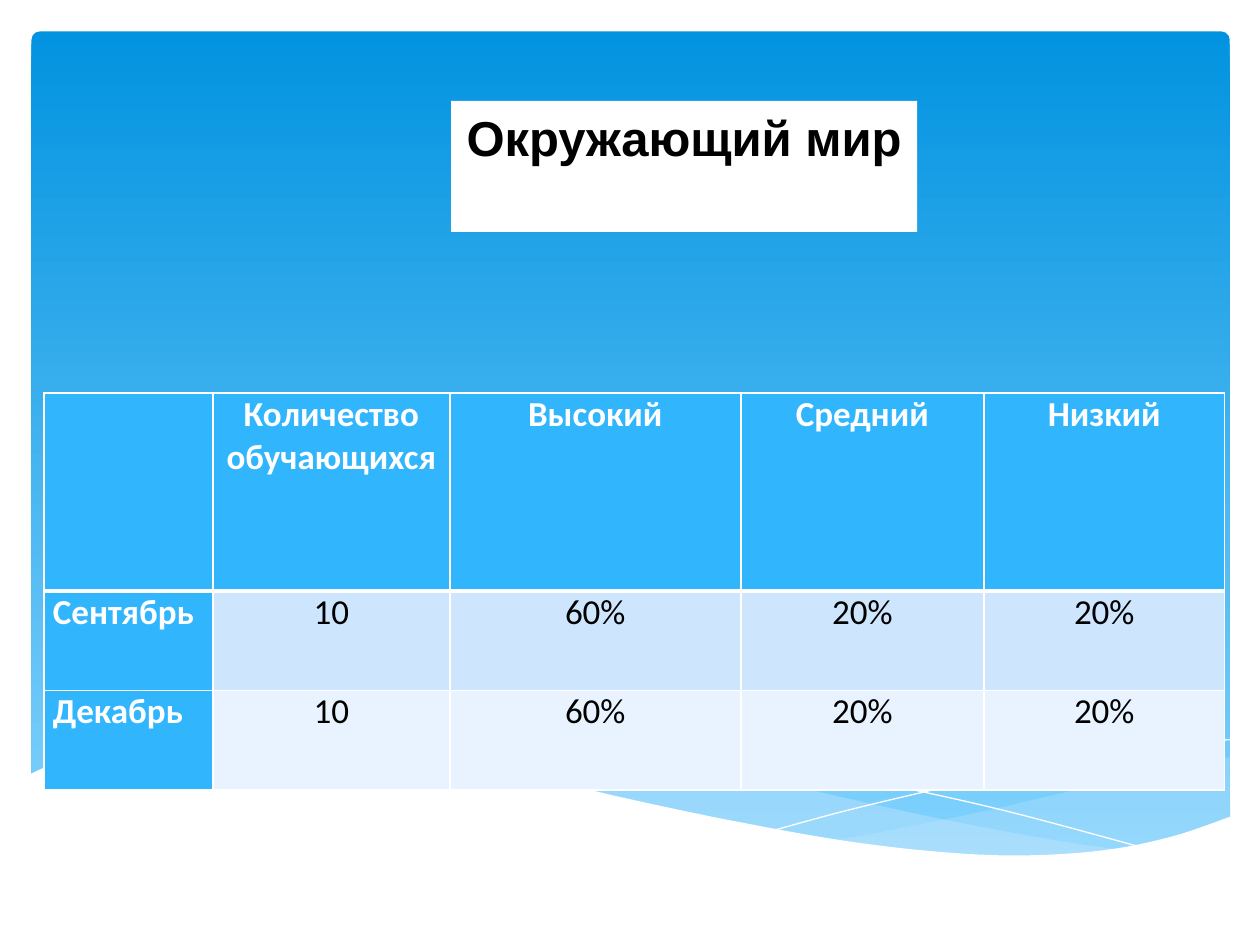
from dataclasses import dataclass
from typing import Any, Optional

from lxml.etree import SubElement
from pptx import Presentation
from pptx.dml.color import RGBColor
from pptx.enum.shapes import MSO_SHAPE as Preset
from pptx.enum.text import MSO_ANCHOR as Anchor, MSO_AUTO_SIZE as AutoSize, PP_ALIGN as Align
from pptx.oxml.ns import qn
from pptx.util import Emu, Pt

WHITE = RGBColor(0xFF, 0xFF, 0xFF)
BLACK = RGBColor(0x00, 0x00, 0x00)
DEEP_BLUE = RGBColor(0x02, 0x93, 0xE0)
SKY_BLUE = RGBColor(0x83, 0xD3, 0xFE)
HEADER_BLUE = RGBColor(0x31, 0xB6, 0xFD)
PALE_BLUE = RGBColor(0xC6, 0xE7, 0xFC)
BAND_COLORS = (RGBColor(0xCE, 0xE5, 0xFE), RGBColor(0xE8, 0xF3, 0xFF))

PX_PER_INCH = 100
CURVE_STEPS = 6
TITLE_ONLY_LAYOUT = 5

Point = tuple[float, float]
Curve = list[Point]

COLUMN_WIDTHS = (134, 188, 231, 193, 191)
ROW_HEIGHTS = (157, 79, 79)
TABLE_ROWS = (
    ("", "Количество обучающихся", "Высокий", "Средний", "Низкий"),
    ("Сентябрь", "10", "60%", "20%", "20%"),
    ("Декабрь", "10", "60%", "20%", "20%"),
)


@dataclass(frozen=True)
class Wave:
    """A chain of smooth curves, filled when closed and outlined when open."""
    curves: list[Curve]
    fill: Optional[RGBColor] = None
    opacity: int = 100


WAVES = (
    Wave([[(976, 601), (922, 611), (862, 625), (780, 644), (707, 659), (662, 667)],
          [(662, 667), (706, 674), (758, 678), (815, 680), (873, 676), (922, 667), (977, 649)]],
         PALE_BLUE, 29),
    Wave([[(894, 675), (838, 667), (742, 649), (630, 624), (555, 607), (489, 596),
           (420, 589), (362, 587), (314, 590), (287, 593)],
          [(287, 593), (343, 601), (405, 613), (491, 634), (567, 650), (651, 666),
           (723, 676), (786, 680), (839, 680), (894, 675)]],
         PALE_BLUE, 40),
    Wave([[(310, 597), (353, 591), (402, 589), (469, 590), (533, 596), (609, 606),
           (696, 621), (796, 643), (908, 673)]]),
    Wave([[(614, 659), (673, 643), (749, 625), (837, 606), (897, 596), (939, 590), (976, 587)]]),
    Wave([[(977, 648), (930, 664), (875, 675), (809, 679), (744, 676), (668, 667),
           (579, 651), (503, 635), (447, 622), (391, 609), (340, 599), (292, 592),
           (230, 587), (177, 586), (132, 588), (95, 593), (59, 601), (36, 609), (23, 615)],
          [(23, 731), (977, 731)]],
         WHITE),
)


def px(length: float) -> Emu:
    """Turn a length in px into EMU."""
    return Emu(round(length * 914400 / PX_PER_INCH))


def apply(target: Any, values: dict[str, Any]) -> None:
    """Set each named attribute of the target."""
    for name, value in values.items():
        setattr(target, name, value)


def smooth(points: Curve) -> Curve:
    """Return a Catmull-Rom curve through the points."""
    if len(points) < 3:
        return points
    padded = [points[0], *points, points[-1]]
    curve = [points[0]]
    for a, b, c, d in zip(padded, padded[1:], padded[2:], padded[3:]):
        for step in range(1, CURVE_STEPS + 1):
            t = step / CURVE_STEPS
            curve.append(tuple(
                q + t * (r - p) / 2 + t**2 * (2 * p - 5 * q + 4 * r - s) / 2
                + t**3 * (3 * q - p - 3 * r + s) / 2
                for p, q, r, s in zip(a, b, c, d)))
    return curve


def draw_backdrop(slide: Any) -> None:
    """Draw the rounded panel with its vertical gradient."""
    panel = slide.shapes.add_shape(Preset.ROUNDED_RECTANGLE, px(25), px(25), px(951), px(660))
    panel.adjustments[0] = 0.01
    panel.shadow.inherit = False
    panel.line.fill.background()
    panel.fill.gradient()
    panel.fill.gradient_angle = 270
    for stop, position, color in zip(panel.fill.gradient_stops, (0, 1), (DEEP_BLUE, SKY_BLUE)):
        stop.position = position
        stop.color.rgb = color


def draw_wave(slide: Any, wave: Wave) -> None:
    """Draw one wave as a filled band or a hairline."""
    points = [(px(x), px(y)) for curve in wave.curves for x, y in smooth(curve)]
    builder = slide.shapes.build_freeform(*points[0], scale=1.0)
    builder.add_line_segments(points[1:], close=wave.fill is not None)
    shape = builder.convert_to_shape()
    shape.shadow.inherit = False
    if wave.fill is None:
        shape.fill.background()
        shape.line.color.rgb = WHITE
        shape.line.width = Pt(0)
        return
    shape.line.fill.background()
    shape.fill.solid()
    shape.fill.fore_color.rgb = wave.fill
    if wave.opacity < 100:
        color = shape.element.spPr.find(qn("a:solidFill")).find(qn("a:srgbClr"))
        SubElement(color, qn("a:alpha"), val=str(wave.opacity * 1000))


def add_border(cell: Any, side: str, points: float) -> None:
    """Give one side of a cell a white border."""
    properties = cell._tc.get_or_add_tcPr()
    line = SubElement(properties, qn(f"a:ln{side}"), w=str(Pt(points)))
    fill = SubElement(line, qn("a:solidFill"))
    SubElement(fill, qn("a:srgbClr"), val=str(WHITE))


def format_cell(cell: Any, text: str, row: int, column: int) -> None:
    """Fill one cell with its text, borders and colours."""
    is_heading = row == 0 or column == 0
    margin = px(0 if column == 1 else 7)
    apply(cell, {"margin_left": margin, "margin_right": margin,
                 "margin_top": 0, "margin_bottom": 0, "vertical_anchor": Anchor.TOP})
    widths = {"L": 1, "R": 1, "T": 3 if row == 1 else 1, "B": 3 if row == 0 else 1}
    for side, points in widths.items():
        add_border(cell, side, points)
    cell.fill.solid()
    cell.fill.fore_color.rgb = HEADER_BLUE if is_heading else BAND_COLORS[row - 1]
    if text:
        paragraph = cell.text_frame.paragraphs[0]
        paragraph.alignment = Align.CENTER if column else Align.LEFT
        run = paragraph.add_run()
        run.text = text
        apply(run.font, {"name": "Calibri", "size": Pt(20), "bold": is_heading})
        run.font.color.rgb = WHITE if is_heading else BLACK


def draw_table(slide: Any) -> None:
    """Draw the table of results by month."""
    table = slide.shapes.add_table(
        len(ROW_HEIGHTS), len(COLUMN_WIDTHS), px(35), px(312),
        px(sum(COLUMN_WIDTHS)), px(sum(ROW_HEIGHTS))).table
    for column, width in zip(table.columns, COLUMN_WIDTHS):
        column.width = px(width)
    for row, height in zip(table.rows, ROW_HEIGHTS):
        row.height = px(height)
    for row, texts in enumerate(TABLE_ROWS):
        for column, text in enumerate(texts):
            format_cell(table.cell(row, column), text, row, column)


def place_title(slide: Any, text: str) -> None:
    """Move the title placeholder to the front and format it."""
    title = slide.shapes.title
    title.element.getparent().append(title.element)
    apply(title, {"left": px(358), "top": px(80), "width": px(370), "height": px(104)})
    title.fill.solid()
    title.fill.fore_color.rgb = WHITE
    frame = title.text_frame
    frame.text = text
    apply(frame, {"word_wrap": False, "auto_size": AutoSize.NONE, "vertical_anchor": Anchor.TOP})
    paragraph = frame.paragraphs[0]
    paragraph.alignment = Align.CENTER
    font = paragraph.runs[0].font
    apply(font, {"name": "Arial", "size": Pt(28), "bold": True})
    font.color.rgb = BLACK


def main() -> None:
    """Build the slide and save it."""
    presentation = Presentation()
    apply(presentation, {"slide_width": px(1000), "slide_height": px(750)})
    slide = presentation.slides.add_slide(presentation.slide_layouts[TITLE_ONLY_LAYOUT])
    draw_backdrop(slide)
    for wave in WAVES:
        draw_wave(slide, wave)
    draw_table(slide)
    place_title(slide, "Окружающий мир")
    presentation.save("out.pptx")


if __name__ == "__main__":
    main()
